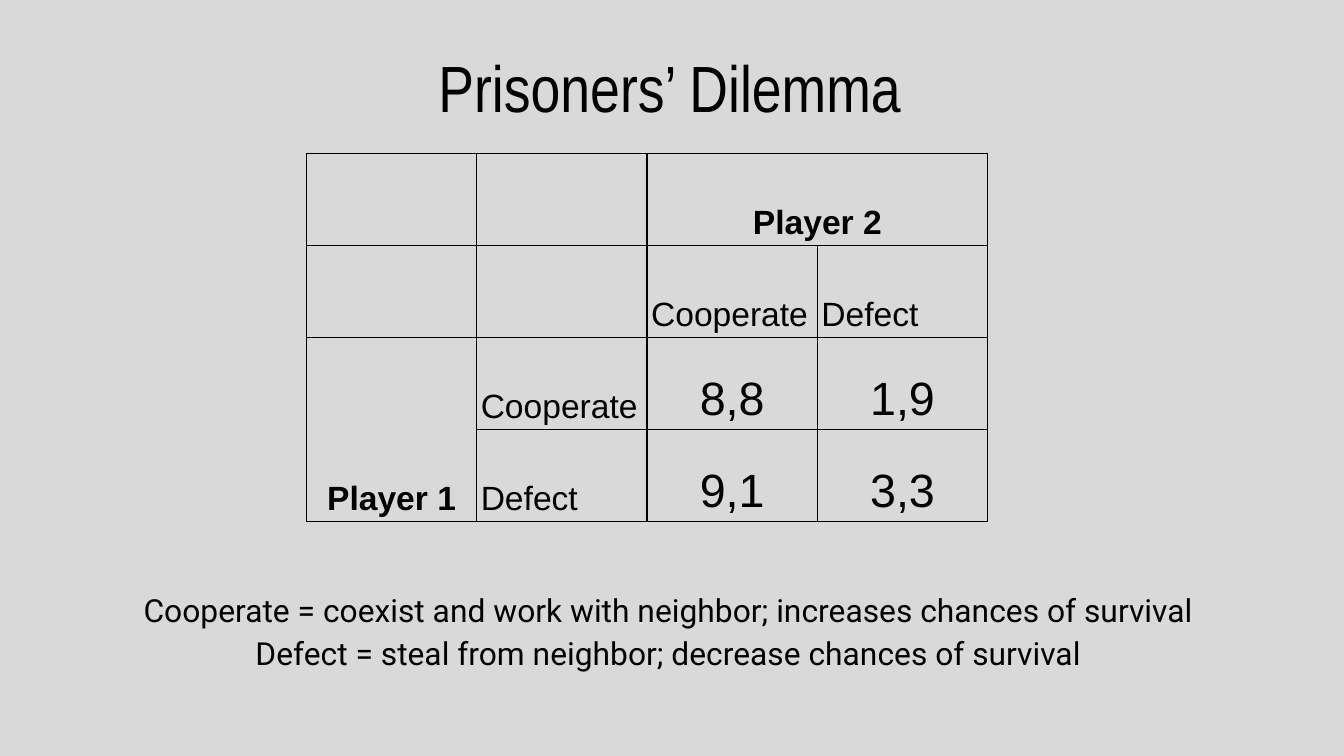
from dataclasses import dataclass

import lxml.etree
import pptx
import pptx.dml.color
import pptx.enum.text
import pptx.oxml.ns
import pptx.util

Inches = pptx.util.Inches
Pt = pptx.util.Pt
ALIGN = pptx.enum.text.PP_ALIGN
ANCHOR = pptx.enum.text.MSO_ANCHOR
BLACK = "000000"
SLIDE_WIDTH = 10
SLIDE_HEIGHT = SLIDE_WIDTH * 9 / 16
MARGINS = ("margin_left", "margin_top", "margin_right", "margin_bottom")


@dataclass
class TextBlock:
    left: float
    top: float
    width: float
    height: float
    lines: list[str]
    font: str
    size: float
    spacing: float = 1.0


@dataclass
class TableEntry:
    row: int
    column: int
    text: str
    size: float = 18
    bold: bool = False
    alignment: ALIGN = ALIGN.CENTER


def rgb(color: str) -> pptx.dml.color.RGBColor:
    return pptx.dml.color.RGBColor.from_string(color)


def apply_format(target: object, values: dict) -> None:
    for name, value in values.items():
        setattr(target, name, value)


def write_paragraph(paragraph, text: str, alignment: ALIGN, spacing: float, font: dict) -> None:
    apply_format(paragraph, {"alignment": alignment, "line_spacing": spacing})
    run = paragraph.add_run()
    run.text = text
    apply_format(run.font, font)
    run.font.color.rgb = rgb(BLACK)


def draw_text(slide, block: TextBlock) -> None:
    shape = slide.shapes.add_textbox(
        Inches(block.left), Inches(block.top), Inches(block.width), Inches(block.height)
    )
    frame = shape.text_frame
    apply_format(frame, dict.fromkeys(MARGINS, Inches(0.1)))
    apply_format(frame, {"word_wrap": True, "vertical_anchor": ANCHOR.TOP})
    for index, line in enumerate(block.lines):
        paragraph = frame.add_paragraph() if index else frame.paragraphs[0]
        font = {"name": block.font, "size": Pt(block.size)}
        write_paragraph(paragraph, line, ALIGN.CENTER, block.spacing, font)


def draw_borders(cell, color: str, width: float) -> None:
    properties = cell._tc.get_or_add_tcPr()
    qn = pptx.oxml.ns.qn
    for index, side in enumerate(("a:lnL", "a:lnR", "a:lnT", "a:lnB")):
        line = lxml.etree.Element(qn(side), w=str(Pt(width)))
        fill = lxml.etree.SubElement(line, qn("a:solidFill"))
        lxml.etree.SubElement(fill, qn("a:srgbClr"), val=color)
        properties.insert(index, line)


def draw_payoffs(slide, entries: list[TableEntry]) -> None:
    count, width, height = 4, 5.07, 2.74
    table = slide.shapes.add_table(
        count, count, Inches(2.28), Inches(1.14), Inches(width), Inches(height)
    ).table
    apply_format(table, {"first_row": False, "horz_banding": False})
    for column in table.columns:
        column.width = Inches(width / count)
    for row in table.rows:
        row.height = Inches(height / count)
    for cell in table.iter_cells():
        cell.fill.background()
        draw_borders(cell, BLACK, 0.75)
        apply_format(cell, dict.fromkeys(MARGINS, Inches(0.03)))
        cell.vertical_anchor = ANCHOR.BOTTOM
    table.cell(0, 2).merge(table.cell(0, 3))
    table.cell(2, 0).merge(table.cell(3, 0))
    for entry in entries:
        paragraph = table.cell(entry.row, entry.column).text_frame.paragraphs[0]
        font = {"name": "Arial", "size": Pt(entry.size), "bold": entry.bold}
        write_paragraph(paragraph, entry.text, entry.alignment, 1.15, font)


def payoff_entries() -> list[TableEntry]:
    choices = ["Cooperate", "Defect"]
    payoffs = [["8,8", "1,9"], ["9,1", "3,3"]]
    entries = [
        TableEntry(0, 2, "Player 2", bold=True),
        TableEntry(2, 0, "Player 1", bold=True),
    ]
    for index, choice in enumerate(choices, start=2):
        entries.append(TableEntry(1, index, choice, alignment=ALIGN.LEFT))
        entries.append(TableEntry(index, 1, choice, alignment=ALIGN.LEFT))
    for row, values in enumerate(payoffs, start=2):
        for column, value in enumerate(values, start=2):
            entries.append(TableEntry(row, column, value, size=25))
    return entries


def main() -> None:
    presentation = pptx.Presentation()
    size = {"slide_width": Inches(SLIDE_WIDTH), "slide_height": Inches(SLIDE_HEIGHT)}
    apply_format(presentation, size)
    slide = presentation.slides.add_slide(presentation.slide_layouts[6])
    background = slide.background.fill
    background.solid()
    background.fore_color.rgb = rgb("D9D9D9")

    title = TextBlock(0.41, 0.25, 9.15, 0.75, ["Prisoners’ Dilemma"], "Arial Narrow", 35)
    definitions = [
        "Cooperate = coexist and work with neighbor; increases chances of survival",
        "Defect = steal from neighbor; decrease chances of survival",
    ]
    draw_text(slide, title)
    draw_payoffs(slide, payoff_entries())
    draw_text(slide, TextBlock(0.96, 4.25, 8.03, 0.91, definitions, "Roboto", 17, 1.15))
    presentation.save("out.pptx")


if __name__ == "__main__":
    main()
